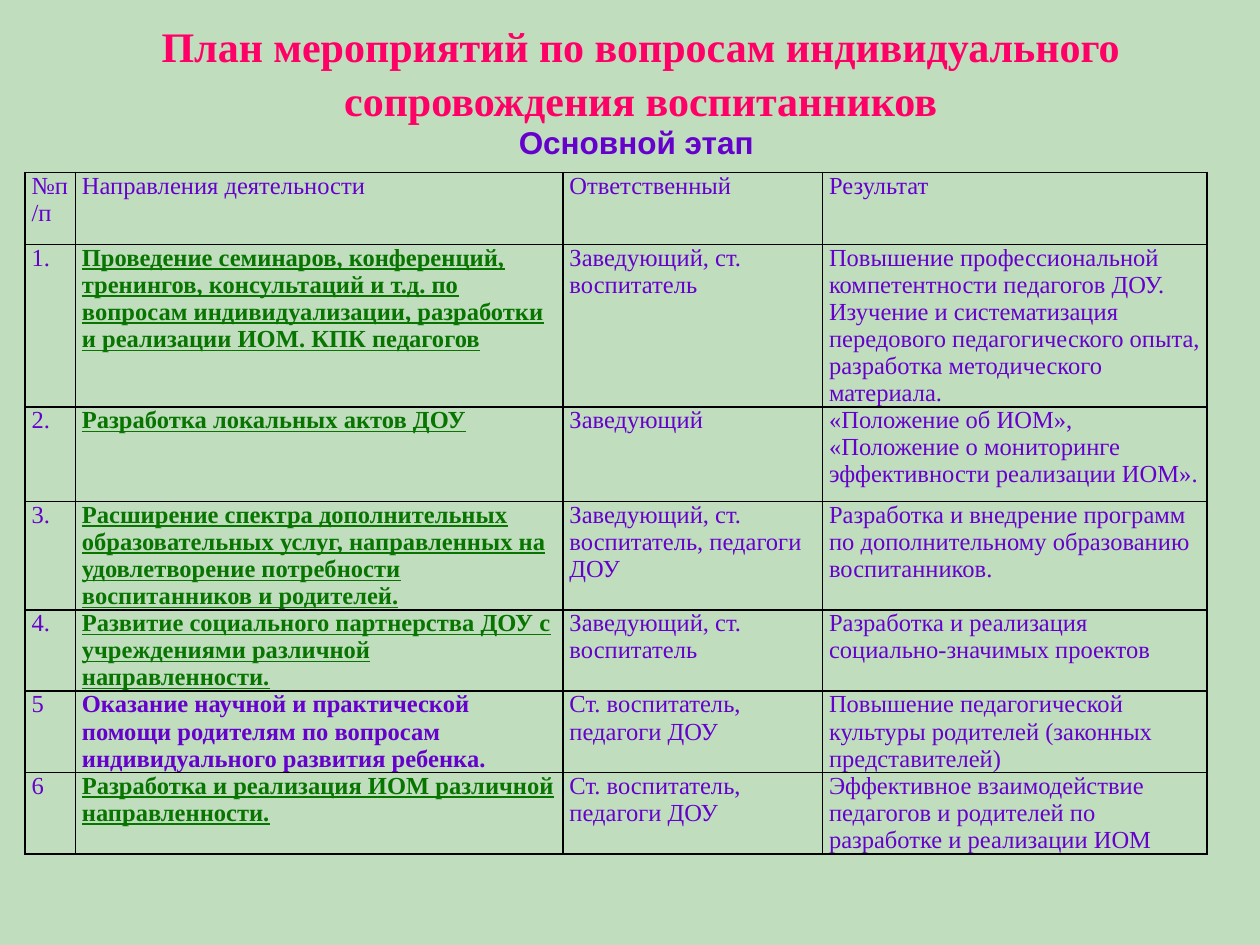
"""Builds a slide with the main-stage plan of individual support activities."""
from dataclasses import dataclass

from lxml import etree
from pptx import Presentation
from pptx.dml.color import RGBColor
from pptx.enum.text import MSO_ANCHOR, PP_ALIGN
from pptx.oxml.ns import qn
from pptx.util import Inches, Pt

CENTER = PP_ALIGN.CENTER
TOP, BOTTOM = MSO_ANCHOR.TOP, MSO_ANCHOR.BOTTOM


@dataclass
class Theme:
    background: str = "C0DDBE"
    title: str = "FF0066"
    text: str = "6600CC"
    link: str = "077500"
    border: str = "000000"
    serif: str = "Times New Roman"
    sans: str = "Arial"
    title_size: int = 24
    subtitle_size: int = 18
    cell_size: int = 14


theme = Theme()


def add_run(p, text, font, size, color, bold=False, underline=False):
    r = p.add_run()
    r.text = text
    r.font.name, r.font.size = font, Pt(size)
    r.font.color.rgb = RGBColor.from_string(color)
    r.font.bold, r.font.underline = bold, underline


def add_borders(cell, color, width):
    tc_pr = cell._tc.get_or_add_tcPr()
    for side in ("lnL", "lnR", "lnT", "lnB"):
        ln = etree.SubElement(tc_pr, qn(f"a:{side}"), w=str(Pt(width)))
        fill = etree.SubElement(ln, qn("a:solidFill"))
        etree.SubElement(fill, qn("a:srgbClr"), val=color)


prs = Presentation()
prs.slide_width, prs.slide_height = Inches(10), Inches(7.5)
s = prs.slides.add_slide(prs.slide_layouts[5])
s.background.fill.solid()
s.background.fill.fore_color.rgb = RGBColor.from_string(theme.background)

title = s.shapes.title
title.left, title.top = Inches(1.18), Inches(0.13)
title.width, title.height = Inches(7.81), Inches(0.91)
tf = title.text_frame
tf.word_wrap, tf.vertical_anchor = True, BOTTOM
p = tf.paragraphs[0]
p.alignment, p.line_spacing = CENTER, 1.07
add_run(p, "План мероприятий по вопросам индивидуального сопровождения воспитанников",
        theme.serif, theme.title_size, theme.title, bold=True)

header = ("№п/п", "Направления деятельности", "Ответственный", "Результат")
activities = [
    ("1.", "Проведение семинаров, конференций, тренингов, консультаций и т.д. по вопросам "
     "индивидуализации, разработки и реализации ИОМ. КПК педагогов",
     "Заведующий, ст. воспитатель",
     "Повышение профессиональной компетентности педагогов ДОУ. Изучение и систематизация "
     "передового педагогического опыта, разработка методического материала."),
    ("2.", "Разработка локальных актов ДОУ", "Заведующий",
     "«Положение об ИОМ», «Положение о мониторинге эффективности реализации ИОМ»."),
    ("3.", "Расширение спектра дополнительных образовательных услуг, направленных на "
     "удовлетворение потребности воспитанников и родителей.",
     "Заведующий, ст. воспитатель, педагоги ДОУ",
     "Разработка и внедрение программ по дополнительному образованию воспитанников."),
    ("4.", "Развитие социального партнерства ДОУ с учреждениями различной направленности.",
     "Заведующий, ст. воспитатель",
     "Разработка и реализация социально-значимых проектов"),
    ("5", "Оказание научной и практической помощи родителям по вопросам индивидуального "
     "развития ребенка.",
     "Ст. воспитатель, педагоги ДОУ",
     "Повышение педагогической культуры родителей (законных представителей)"),
    ("6", "Разработка и реализация ИОМ различной направленности.",
     "Ст. воспитатель, педагоги ДОУ",
     "Эффективное взаимодействие педагогов и родителей по разработке и реализации ИОМ"),
]
rows = [header, *activities]
col_widths = (0.4, 3.87, 2.06, 3.05)
row_heights = (0.57, 1.13, 0.75, 0.75, 0.38, 0.57, 0.57)
plain_row = 5

table = s.shapes.add_table(len(rows), len(col_widths), Inches(0.2), Inches(1.37),
                           Inches(sum(col_widths)), Inches(sum(row_heights))).table
table.first_row = table.horz_banding = False
for column, width in zip(table.columns, col_widths):
    column.width = Inches(width)
for i, (row, height) in enumerate(zip(rows, row_heights)):
    table.rows[i].height = Inches(height)
    for j, text in enumerate(row):
        cell = table.cell(i, j)
        cell.margin_left = cell.margin_right = Inches(0.05)
        cell.margin_top = cell.margin_bottom = 0
        add_borders(cell, theme.border, 1)
        cell.fill.background()
        activity = i > 0 and j == 1
        linked = activity and i != plain_row
        add_run(cell.text_frame.paragraphs[0], text, theme.serif, theme.cell_size,
                theme.link if linked else theme.text, activity, linked)

subtitle = s.shapes.add_textbox(Inches(3.66), Inches(0.93), Inches(2.78), Inches(0.4))
tf = subtitle.text_frame
tf.word_wrap, tf.vertical_anchor = True, TOP
p = tf.paragraphs[0]
p.alignment = CENTER
add_run(p, "Основной этап", theme.sans, theme.subtitle_size, theme.text, bold=True)

prs.save("out.pptx")
